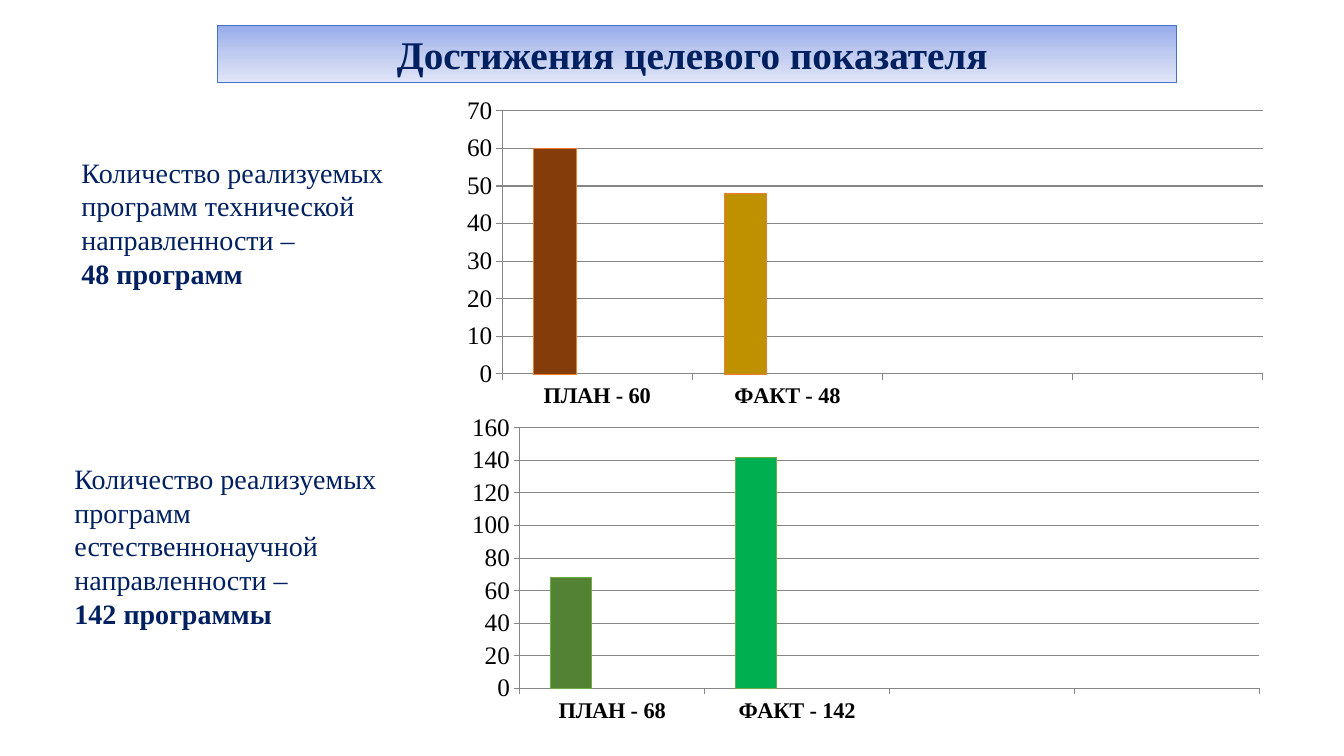
from copy import deepcopy
from pptx import Presentation
from pptx import util as u
from pptx.chart import data
from pptx.dml import color
from pptx.enum import chart as ch, text
from pptx.oxml import parse_xml
from pptx.oxml.ns import nsdecls, qn

NAVY, GREY = "002060", "868686"
ORANGE = [(0, "F18C57"), (0.5, "F67B28"), (1, "E56C19")]
BLUE = [(0, "96ABEA"), (0.5, "C0CBF0"), (1, "E0E5F7")]


def paint(code):
    return color.RGBColor.from_string(code)


class Deck:
    """Holds the text style and the current slide."""

    def __init__(self):
        self.prs = Presentation()
        self.prs.slide_width, self.prs.slide_height = u.Inches(13.33), u.Inches(7.5)
        self.slide = self.prs.slides.add_slide(self.prs.slide_layouts[5])
        self.face = "Times New Roman"

    def style(self, font, tint=NAVY, **opts):
        for key, val in {"name": self.face, **opts}.items():
            setattr(font, key, val)
        font.color.rgb = paint(tint)

    def blend(self, fill, root, stops):
        fill.gradient()
        fill.gradient_angle = 270
        group = next(root.iter(qn("a:gsLst")))
        while len(group) < len(stops):
            group.append(deepcopy(group[0]))
        for stop, (place, code) in zip(fill.gradient_stops, stops):
            stop.position = place
            stop.color.rgb = paint(code)

    def edge(self, line, code, width=0.5):
        line.color.rgb = paint(code)
        line.width = u.Pt(width)

    def title(self, words, box):
        shape = self.slide.shapes.title
        for key, val in zip(("left", "top", "width", "height"), box):
            setattr(shape, key, u.Inches(val))
        self.blend(shape.fill, shape._element, BLUE)
        self.edge(shape.line, "4472C4")
        frame = shape.text_frame
        frame.text = words
        frame.auto_size = text.MSO_AUTO_SIZE.NONE
        frame.vertical_anchor = text.MSO_ANCHOR.MIDDLE
        para = frame.paragraphs[0]
        para.alignment = text.PP_ALIGN.CENTER
        self.style(para.runs[0].font, size=u.Pt(28), bold=True)

    def note(self, words, total, box):
        frame = self.slide.shapes.add_textbox(*map(u.Inches, box)).text_frame
        frame.word_wrap = True
        frame.auto_size = text.MSO_AUTO_SIZE.SHAPE_TO_FIT_TEXT
        frame.text = f"{words}\n{total}"
        for para, bold in zip(frame.paragraphs, (False, True)):
            self.style(para.runs[0].font, size=u.Pt(20), bold=bold)

    def axis(self, axis, **opts):
        axis.major_tick_mark = ch.XL_TICK_MARK.OUTSIDE
        axis.minor_tick_mark = ch.XL_TICK_MARK.NONE
        self.edge(axis.format.line, GREY, 0.75)
        self.style(axis.tick_labels.font, "000000", **opts)

    def layout(self, chart, plot):
        parts = "".join(f'<c:{key} val="{val}"/>' for key, val in zip("xywh", plot))
        area = chart._chartSpace.chart.plotArea
        for old in area.findall(qn("c:layout")):
            area.remove(old)
        area.insert(0, parse_xml(
            f'<c:layout {nsdecls("c")}><c:manualLayout><c:layoutTarget val="inner"/>'
            f'<c:xMode val="edge"/><c:yMode val="edge"/>{parts}</c:manualLayout></c:layout>'))

    def bars(self, cats, vals, tints, rim, top, step, box, plot):
        sheet = data.CategoryChartData()
        sheet.categories = cats + ["", ""]
        sheet.add_series("Series 1", vals + [None] * 2)
        for name in ("Series 2", "Series 3"):
            sheet.add_series(name, [None] * 4)
        chart = self.slide.shapes.add_chart(
            ch.XL_CHART_TYPE.COLUMN_CLUSTERED, *map(u.Inches, box), sheet).chart
        chart.has_legend = chart.has_title = False
        self.style(chart.font, "000000", name="Calibri", size=u.Pt(18))
        self.layout(chart, plot)
        self.axis(chart.category_axis, size=u.Pt(16), bold=True)
        axis = chart.value_axis
        self.axis(axis, size=u.Pt(18))
        for key, val in {"minimum_scale": 0, "maximum_scale": top, "major_unit": step}.items():
            setattr(axis, key, val)
        axis.has_major_gridlines = True
        self.edge(axis.major_gridlines.format.line, GREY, 0.75)
        group = chart.plots[0]
        group.gap_width, group.overlap, group.vary_by_categories = 150, 0, False
        main, *rest = group.series
        self.blend(main.format.fill, main._element, ORANGE)
        self.edge(main.format.line, rim)
        for num, tint in enumerate(tints):
            form = main.points[num].format
            form.fill.solid()
            form.fill.fore_color.rgb = paint(tint)
            self.edge(form.line, rim)
        for row, tint in zip(rest, ("ED7D31", "A5A5A5")):
            row.format.fill.solid()
            row.format.fill.fore_color.rgb = paint(tint)


def main():
    deck = Deck()
    deck.note("Количество реализуемых программ технической направленности –",
              "48 программ", (0.71, 1.49, 3.9, 1.45))
    deck.note("Количество реализуемых программ естественнонаучной направленности –",
              "142 программы", (0.64, 4.53, 3.44, 1.78))
    deck.bars(["ПЛАН - 60", "ФАКТ - 48"], [60, 48], ("843C0B", "BF9000"), "ED7D31",
              70, 10, (4.47, 0.9, 8.23, 3.23), (0.062, 0.062, 0.917, 0.808))
    deck.bars(["ПЛАН - 68", "ФАКТ - 142"], [68, 142], ("548235", "00B050"), "70AD47",
              160, 20, (4.57, 3.89, 8.13, 3.4), (0.072, 0.104, 0.902, 0.761))
    deck.title("Достижения целевого показателя ", (2.16, 0.25, 9.51, 0.57))
    deck.prs.save("out.pptx")


if __name__ == "__main__":
    main()
